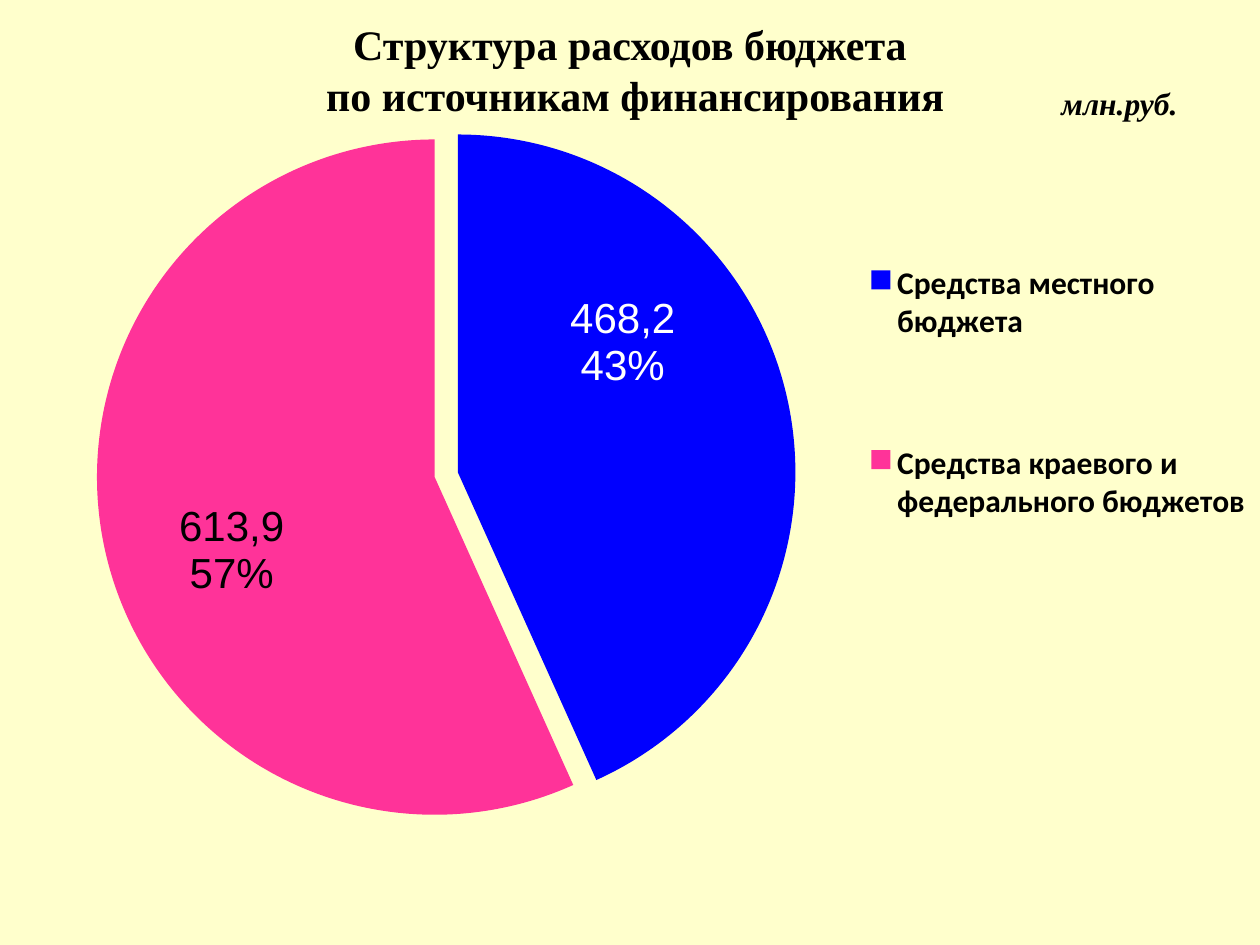
from pptx import Presentation
from pptx.chart.data import CategoryChartData as Data
from pptx.dml.color import RGBColor as RGB
from pptx.enum.chart import XL_CHART_TYPE as Kind, XL_LABEL_POSITION as Spot
from pptx.enum.chart import XL_LEGEND_POSITION as Side
from pptx.enum.text import MSO_ANCHOR as Anchor, PP_ALIGN as Align
from pptx.oxml import parse_xml
from pptx.oxml.ns import nsdecls, qn
from pptx.util import Inches, Pt

COLORS = {"cream": "FFFFCC", "blue": "0000FF", "pink": "FF3399",
          "black": "000000", "white": "FFFFFF"}

# Font formats
HEAD = {"name": "Times New Roman", "size": Pt(24), "bold": True}
UNIT = {"name": "Times New Roman", "size": Pt(18), "bold": True, "italic": True}
BODY = {"name": "Calibri", "size": Pt(18)}
KEY = {**BODY, "bold": True}
LABEL = {"name": "Arial", "size": Pt(24), "bold": False}

# Places inside the chart, as shares of its size
EDGE = {"xMode": "edge", "yMode": "edge"}
PLOT = {"layoutTarget": "inner", **EDGE, "x": 0.01, "y": 0.01, "w": 0.67, "h": 0.99}
LEGEND = {**EDGE, "x": 0.68, "y": 0.17, "w": 0.32, "h": 0.49}

SPREAD = 25  # explosion of the whole series: sets how far the pie shrinks
SLICES = [
    {"name": "Средства местного бюджета", "value": 468.2,
     "lines": ("468,2", "43%"), "fill": "blue", "ink": "white",
     "gap": 7, "shift": {"x": 0, "y": -0.1}},
    {"name": "Средства краевого и федерального бюджетов", "value": 613.9,
     "lines": ("613,9", "57%"), "fill": "pink", "ink": "black",
     "gap": 0, "shift": {"x": -0.03, "y": 0.04}},
]


def place(node, after, spots):
    """Give a chart part a manual layout, right after the named child."""
    for old in node.findall(qn("c:layout")):
        node.remove(old)
    tags = "".join(f'<c:{tag} val="{val}"/>' for tag, val in spots.items())
    new = parse_xml(f'<c:layout {nsdecls("c")}><c:manualLayout>{tags}'
                    '</c:manualLayout></c:layout>')
    if after:
        node.find(qn(after)).addnext(new)
    else:
        node.insert(0, new)


def explode(node, before, gap):
    """Set the explosion of a series or a slice."""
    new = parse_xml(f'<c:explosion {nsdecls("c")} val="{gap}"/>')
    node.find(qn(before)).addprevious(new)


class Deck:
    def __init__(self, pres):
        self.slide = pres.slides.add_slide(pres.slide_layouts[6])

    def style(self, font, form, color="black"):
        for key, val in form.items():
            setattr(font, key, val)
        font.color.rgb = RGB.from_string(COLORS[color])

    def text(self, box, words, form, wrap=True):
        frame = self.slide.shapes.add_textbox(*map(Inches, box)).text_frame
        frame.word_wrap = wrap
        frame.vertical_anchor = Anchor.MIDDLE
        para = frame.paragraphs[0]
        para.text = words
        para.alignment = Align.CENTER
        for run in para.runs:
            self.style(run.font, form)

    def pie(self, box, slices):
        data = Data(number_format="0.0")
        data.categories = [part["name"] for part in slices]
        data.add_series("Series 1", [part["value"] for part in slices])
        frame = self.slide.shapes.add_chart(Kind.PIE, *map(Inches, box), data)
        chart = frame.chart
        chart.has_title = False
        self.style(chart.font, BODY)
        self.back(chart, "cream")

        plot = chart.plots[0]
        plot.vary_by_categories = True
        row = plot.series[0]
        for i, part in enumerate(slices):
            self.slice(row.points[i], part)
        for node, part in zip(row._element.findall(qn("c:dPt")), slices):
            explode(node, "c:spPr", part["gap"])
        explode(row._element, "c:dPt", SPREAD)

        tags = row.data_labels
        tags.show_value = tags.show_percentage = True
        self.style(tags.font, LABEL)
        place(chart._chartSpace.chart.plotArea, None, PLOT)
        self.legend(chart)

    def back(self, chart, color):
        chart._chartSpace.chart.addnext(parse_xml(
            f'<c:spPr {nsdecls("c", "a")}><a:solidFill>'
            f'<a:srgbClr val="{COLORS[color]}"/></a:solidFill>'
            '<a:ln><a:noFill/></a:ln></c:spPr>'))

    def slice(self, point, part):
        look = point.format
        look.fill.solid()
        look.fill.fore_color.rgb = RGB.from_string(COLORS[part["fill"]])
        look.line.fill.background()

        # Label, one paragraph a line
        tag = point.data_label
        frame = tag.text_frame
        frame.text = "\n".join(part["lines"])
        for para in frame.paragraphs:
            for run in para.runs:
                self.style(run.font, LABEL, part["ink"])
        tag.position = Spot.CENTER
        node = tag._get_or_add_dLbl()
        place(node, "c:idx", part["shift"])

    def legend(self, chart):
        chart.has_legend = True
        key = chart.legend
        key.position = Side.RIGHT
        key.include_in_layout = False
        self.style(key.font, KEY)
        place(key._element, "c:legendPos", LEGEND)


def main():
    pres = Presentation()
    pres.slide_width, pres.slide_height = Inches(10), Inches(7.5)
    deck = Deck(pres)

    # Chart over the whole slide
    deck.pie((0, 0, 10, 7.5), SLICES)

    # Title and unit
    deck.text((0.5, 0.12, 9, 0.86),
              "Структура расходов бюджета\v по источникам финансирования", HEAD)
    deck.text((8.32, 0.62, 1.13, 0.4), "млн.руб.", UNIT, wrap=False)

    pres.save("out.pptx")


if __name__ == "__main__":
    main()
